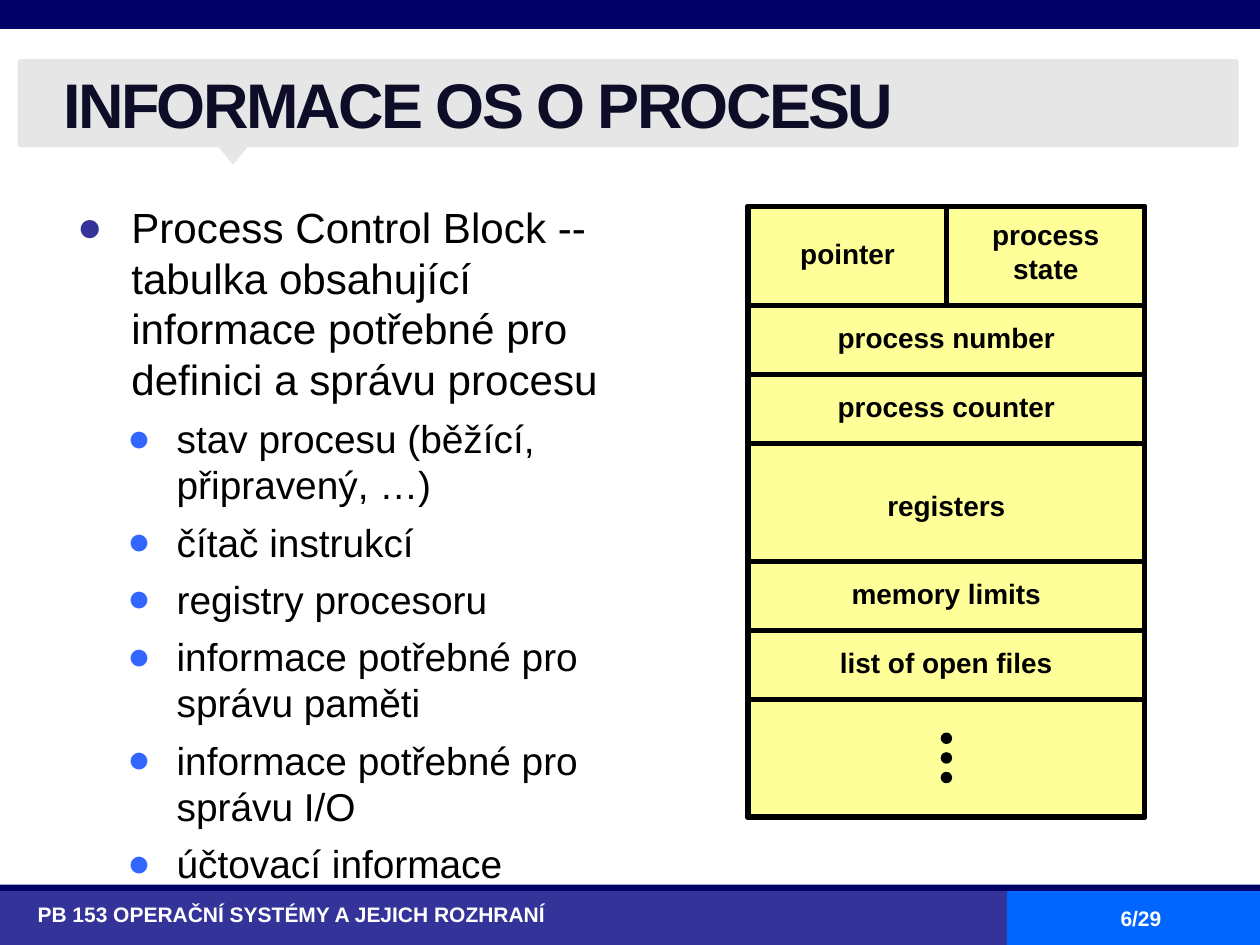
from lxml.etree import SubElement
from pptx import Presentation
from pptx.dml.color import RGBColor
from pptx.enum.shapes import MSO_SHAPE as SHAPE
from pptx.enum.text import MSO_ANCHOR as ANCHOR, PP_ALIGN as ALIGN
from pptx.oxml.ns import qn
from pptx.util import Pt

COLORS = {
    "navy": "000066", "indigo": "333399", "blue": "0066FF", "bullet": "3366FF",
    "gray": "E6E6E6", "title": "0D0D28", "yellow": "FFFF99",
    "black": "000000", "white": "FFFFFF",
}
RGB = {name: RGBColor.from_string(value) for name, value in COLORS.items()}

prs = Presentation()
prs.slide_width, prs.slide_height = Pt(720), Pt(540)
s = prs.slides.add_slide(prs.slide_layouts[6])


def add_box(shapes, kind, x, y, w, h, fill, line=None):
    """Add a filled preset shape, with a black outline if a width is given."""
    sp = shapes.add_shape(kind, Pt(x), Pt(y), Pt(w), Pt(h))
    sp.shadow.inherit = False
    sp.fill.solid()
    sp.fill.fore_color.rgb = RGB[fill]
    if line:
        sp.line.color.rgb = RGB["black"]
        sp.line.width = Pt(line)
    else:
        sp.line.fill.background()
    return sp


def add_text(x, y, w, h, lines, size, color, bold=True, align=ALIGN.LEFT, inset=True):
    """Add a wrapped text box with one paragraph per line; return its frame."""
    tf = s.shapes.add_textbox(Pt(x), Pt(y), Pt(w), Pt(h)).text_frame
    tf.word_wrap = True
    if not inset:
        tf.margin_left = tf.margin_right = tf.margin_top = tf.margin_bottom = 0
    tf.text = "\n".join(lines)
    for p in tf.paragraphs:
        p.alignment = align
        for r in p.runs:
            r.font.name, r.font.size, r.font.bold = "Arial", Pt(size), bold
            r.font.color.rgb = RGB[color]
    return tf


# Header and footer bands
for x, y, w, h, fill in [
    (0, 0, 720, 16.6, "navy"),
    (0, 509, 720, 31, "indigo"),
    (575.3, 509, 144.7, 31, "blue"),
    (0, 505.5, 720, 3.6, "navy"),
]:
    add_box(s.shapes, SHAPE.RECTANGLE, x, y, w, h, fill)
add_text(586.8, 517.7, 130.3, 14.4, ["6/29"], 12, "white", align=ALIGN.CENTER, inset=False)
add_text(14.4, 511.6, 561.6, 37.4, ["PB 153 OPERAČNÍ SYSTÉMY A JEJICH ROZHRANÍ"], 12, "white")

# Title on its gray callout
banner = add_box(s.shapes, SHAPE.ROUNDED_RECTANGLE, 10.1, 33.8, 697.7, 50.4, "gray")
banner.adjustments[0] = 0.035
pointer = add_box(s.shapes, SHAPE.ISOSCELES_TRIANGLE, 123.8, 82.6, 18.7, 11.5, "gray")
pointer.rotation = 180
tf = add_text(36.2, 21.6, 669.6, 78.5, ["INFORMACE OS O PROCESU"], 36, "title", inset=False)
tf.vertical_anchor = ANCHOR.MIDDLE
p = tf.paragraphs[0]
p.line_spacing = Pt(40)
p.runs[0].font._element.set("spc", "-150")

# Bulleted text
bullets = [
    "Process Control Block -- tabulka obsahující informace potřebné pro definici a správu procesu",
    "stav procesu (běžící, připravený, …)",
    "čítač instrukcí",
    "registry procesoru",
    "informace potřebné pro správu paměti",
    "informace potřebné pro správu I/O",
    "účtovací informace",
]
tf = add_text(37, 111.6, 329, 380.2, bullets, 24.1, "black", bold=False)
for i, p in enumerate(tf.paragraphs):
    margin, indent, color = (56.9, -28.1, "bullet") if i else (31, -31, "indigo")
    pPr = p._p.get_or_add_pPr()
    pPr.set("marL", str(Pt(margin)))
    pPr.set("indent", str(Pt(indent)))
    SubElement(SubElement(pPr, qn("a:buClr")), qn("a:srgbClr")).set("val", COLORS[color])
    SubElement(pPr, qn("a:buFont")).set("typeface", "Arial")
    SubElement(pPr, qn("a:buChar")).set("char", "●")
    if i:
        p.level = 1
        p.space_before = Pt(6)
        p.runs[0].font.size = Pt(22.2)

# Process control block: stacked rows, the first one split in two
LEFT, TOP, WIDTH = 427.5, 118, 226.6
SPLIT, ROW, TALL = 56.5, 39.5, 67.2
HALF = WIDTH / 2
LABEL_HEIGHT = 26.6
rows = [
    ("process number", ROW, 5), ("process counter", ROW, 5), ("registers", TALL, 22.2),
    ("memory limits", ROW, 5), ("list of open files", ROW, 5), ("", TALL, 0),
]
total = SPLIT + sum(h for _, h, _ in rows)
add_box(s.shapes, SHAPE.RECTANGLE, LEFT, TOP, WIDTH, total, "yellow", 3)

for i, (label, y, h) in enumerate([("pointer", 131.8, LABEL_HEIGHT), ("process state", 121, 46)]):
    x = LEFT + i * HALF
    add_box(s.shapes, SHAPE.RECTANGLE, x, TOP, HALF, SPLIT, "yellow", 3)
    add_text(x + 11.8, y, 90, h, [label], 16, "black", align=ALIGN.CENTER)

y = TOP + SPLIT
for label, h, offset in rows:
    add_box(s.shapes, SHAPE.RECTANGLE, LEFT, y, WIDTH, h, "yellow", 3)
    if label:
        add_text(LEFT + 17.5, y + offset, 191.5, LABEL_HEIGHT, [label], 16, "black",
                 align=ALIGN.CENTER)
    y += h

dots = s.shapes.add_group_shape()
for i in range(3):
    add_box(dots.shapes, SHAPE.OVAL, 537.9, 419 + i * 11.2, 5.8, 5.8, "black", 0.75)

prs.save("out.pptx")
